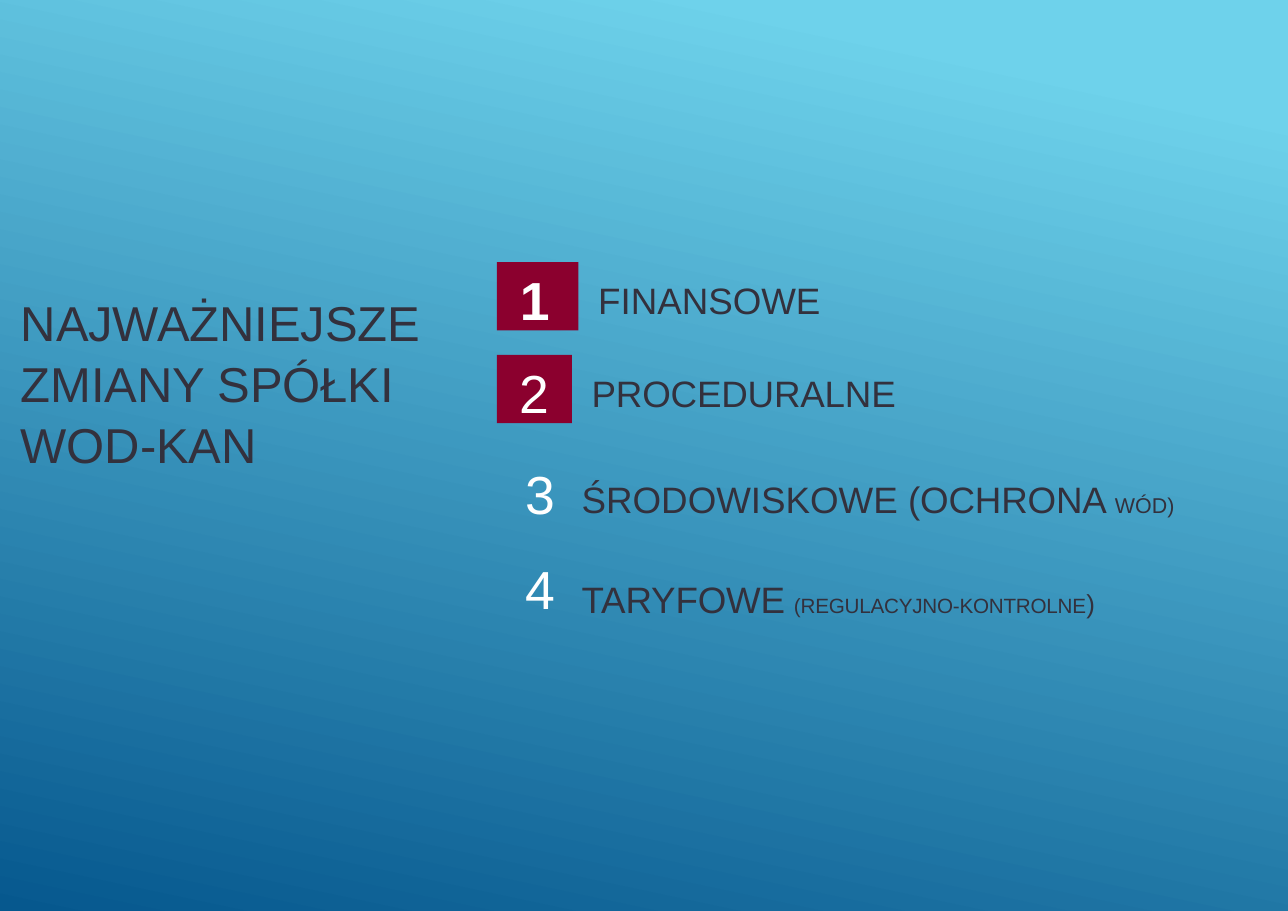
import pptx
import pptx.dml.color
import pptx.enum.shapes
import pptx.enum.text
import pptx.util

RGBColor = pptx.dml.color.RGBColor
SKY = RGBColor(0x6E, 0xD2, 0xEB)
NAVY = RGBColor(0x06, 0x58, 0x8E)
INK = RGBColor(0x33, 0x31, 0x3D)
MAROON = RGBColor(0x8B, 0x00, 0x2E)
WHITE = RGBColor(0xFF, 0xFF, 0xFF)

TIGHT = -10  # letter spacing in hundredths of a point


class SlideBuilder:
    """Places elements by percentages of the slide's width and height."""

    font_name = "Arial"
    line_spacing = 1.04

    def __init__(self, presentation):
        self.width = presentation.slide_width
        self.height = presentation.slide_height
        self.slide = presentation.slides.add_slide(presentation.slide_layouts[5])

    def box(self, left, top, width, height):
        return (round(left * self.width / 100), round(top * self.height / 100),
                round(width * self.width / 100), round(height * self.height / 100))

    def background(self, start, end, angle):
        fill = self.slide.background.fill
        fill.gradient()
        fill.gradient_angle = angle
        for stop, (position, color) in zip(fill.gradient_stops, (start, end)):
            stop.position = position
            stop.color.rgb = color

    def frame(self, shape, inset_top):
        frame = shape.text_frame
        frame.word_wrap = True
        frame.auto_size = pptx.enum.text.MSO_AUTO_SIZE.NONE
        frame.vertical_anchor = pptx.enum.text.MSO_ANCHOR.TOP
        frame.margin_left = frame.margin_right = frame.margin_bottom = 0
        frame.margin_top = pptx.util.Inches(inset_top)
        return frame

    def paragraph(self, paragraph, runs, size, color, indent=0.01, before=1):
        """Each run is (text, size or None, letter spacing)."""
        paragraph.alignment = pptx.enum.text.PP_ALIGN.LEFT
        paragraph.line_spacing = self.line_spacing
        paragraph.space_before = pptx.util.Pt(before)
        paragraph._p.get_or_add_pPr().set("marL", str(pptx.util.Inches(indent)))
        paragraph.font.name = self.font_name
        paragraph.font.size = pptx.util.Pt(size)
        paragraph.font.color.rgb = color
        for text, run_size, spacing in runs:
            run = paragraph.add_run()
            run.text = text
            if run_size:
                run.font.size = pptx.util.Pt(run_size)
            if spacing:
                run._r.get_or_add_rPr().set("spc", str(spacing))

    def title(self, text, *place):
        title = self.slide.shapes.title
        title.left, title.top, title.width, title.height = self.box(*place)
        frame = self.frame(title, 0.01)
        self.paragraph(frame.paragraphs[0], [(text, None, TIGHT)], 32, INK)

    def badge(self, number, bold, *place):
        badge = self.slide.shapes.add_shape(
            pptx.enum.shapes.MSO_SHAPE.RECTANGLE, *self.box(*place))
        badge.shadow.inherit = False
        badge.fill.solid()
        badge.fill.fore_color.rgb = MAROON
        badge.line.fill.background()
        paragraph = self.frame(badge, 0.02).paragraphs[0]
        self.paragraph(paragraph, [(number, None, 0)], 35, WHITE, 0.21, 1.4)
        paragraph.font.bold = bold

    def numbers(self, numbers, *place):
        frame = self.frame(self.slide.shapes.add_textbox(*self.box(*place)), 0.27)
        for index, (number, before) in enumerate(numbers):
            paragraph = frame.add_paragraph() if index else frame.paragraphs[0]
            self.paragraph(paragraph, [(number, None, 0)], 35, WHITE, before=before)

    def label(self, runs, *place):
        frame = self.frame(self.slide.shapes.add_textbox(*self.box(*place)), 0.01)
        self.paragraph(frame.paragraphs[0], runs, 24, INK)


def main():
    presentation = pptx.Presentation()
    presentation.slide_width = pptx.util.Inches(11.69)
    presentation.slide_height = pptx.util.Inches(8.27)
    builder = SlideBuilder(presentation)

    # Background and title
    builder.background((0.1, SKY), (1, NAVY), 258)
    builder.title("NAJWAŻNIEJSZE ZMIANY SPÓŁKI WOD-KAN", 1.54, 31.68, 35.67, 25.51)

    # Numbers: two on badges, two plain
    builder.badge("1", True, 38.58, 28.78, 6.33, 7.5)
    builder.badge("2", False, 38.58, 38.94, 5.82, 7.5)
    builder.numbers([("3", 19.5), ("4", 18.5)], 40.72, 47.04, 2.57, 20.68)

    # Areas of change: left, top, width, runs
    areas = [
        (46.36, 30.23, 42.17, [("FINANSOWE", None, 0)]),
        (45.85, 40.39, 46.19, [("PROCEDURALNE", None, TIGHT)]),
        (45.08, 52, 47.65, [("ŚRODOWISKOWE ", None, 0), ("(OCHRONA ", None, TIGHT),
                            ("WÓD)", 14, 0)]),
        (45.08, 63, 47.65, [("TARYFOWE", None, TIGHT), (" ", 20.5, TIGHT),
                            ("(REGULACYJNO-KONTROLNE", 13.5, TIGHT),
                            (")", 17, TIGHT)]),
    ]
    for left, top, width, runs in areas:
        builder.label(runs, left, top, width, 5.08)

    presentation.save("out.pptx")


if __name__ == "__main__":
    main()
